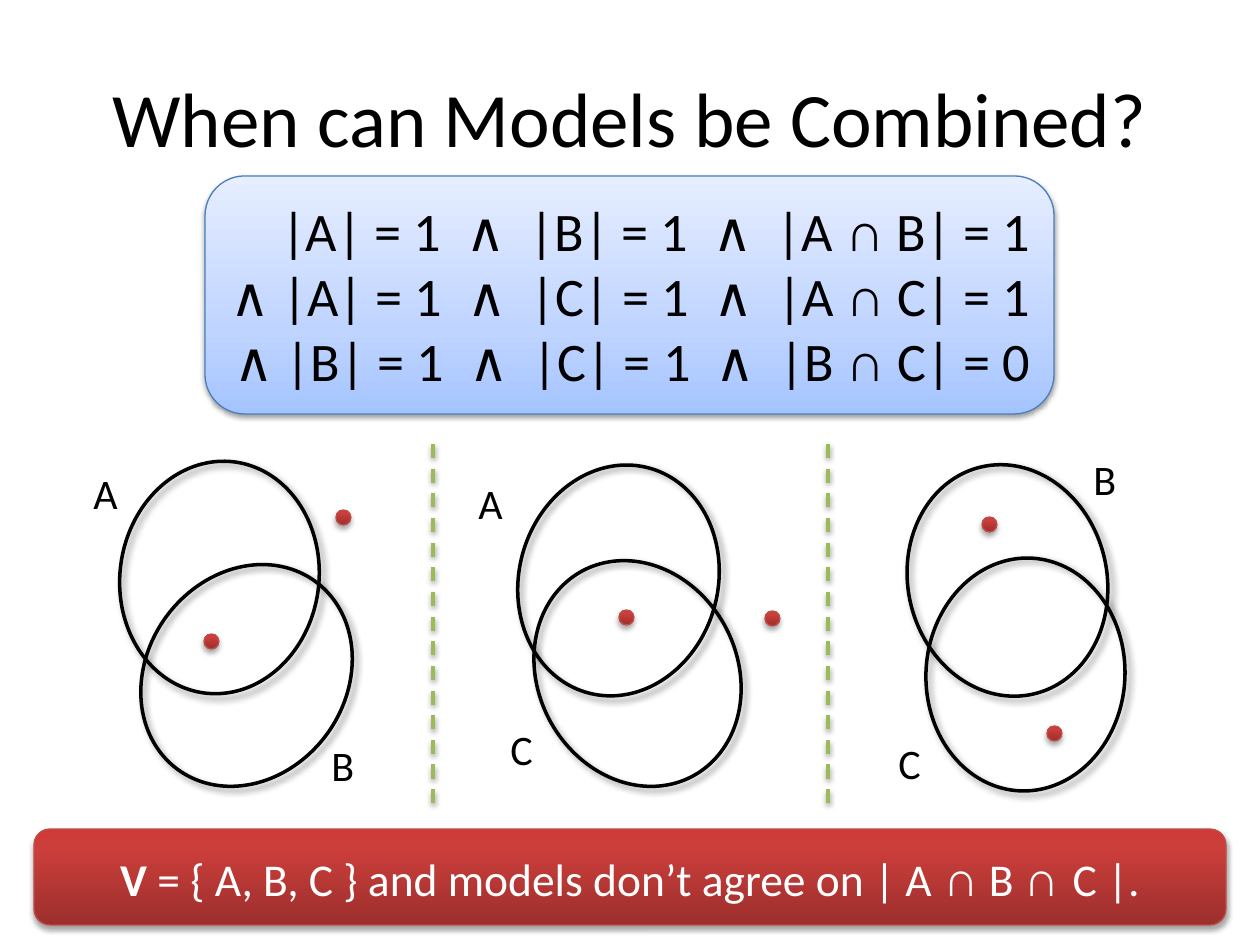
from lxml import etree
from pptx import Presentation
from pptx import util as u
from pptx.dml.color import RGBColor
from pptx.enum import dml, shapes, text
from pptx.oxml.ns import qn

BLACK = RGBColor(0x00, 0x00, 0x00)
WHITE = RGBColor(0xFF, 0xFF, 0xFF)
BLUE_EDGE = RGBColor(0x4B, 0x7E, 0xBC)
RED_EDGE = RGBColor(0xBF, 0x4C, 0x48)
GREEN = RGBColor(0x9B, 0xBB, 0x59)
BLUE_STOPS = [(0, RGBColor(0xA4, 0xC4, 0xFF)), (35, RGBColor(0xBF, 0xD4, 0xFF)),
              (100, RGBColor(0xE6, 0xEE, 0xFF))]
RED_STOPS = [(0, RGBColor(0x9C, 0x2F, 0x2D)), (80, RGBColor(0xCB, 0x3E, 0x3A)),
             (100, RGBColor(0xCE, 0x3B, 0x37))]

# opacity %, blur pt, distance pt, direction in degrees
SOFT_SHADOW = (38, 3.1, 1.6, 90)
RED_SHADOW = (35, 3.1, 1.8, 90)
SET_SHADOW = (40, 4, 3, 45)

EMU_PER_PX = 914400 / 126
SET_SIZE = (199, 233)
DOT = 15
LABEL_SIZE = (50, 63)


def px(*lengths):
    return [u.Emu(round(n * EMU_PER_PX)) for n in lengths]


def add_color(parent, color, opacity=100):
    node = etree.SubElement(parent, qn("a:srgbClr"), val=str(color))
    if opacity < 100:
        etree.SubElement(node, qn("a:alpha"), val=str(opacity * 1000))


def add_shadow(element, opacity, blur, distance, direction):
    effects = etree.SubElement(element.spPr, qn("a:effectLst"))
    outer = etree.SubElement(
        effects, qn("a:outerShdw"), blurRad=str(u.Pt(blur)), dist=str(u.Pt(distance)),
        dir=str(direction * 60000), algn="ctr", rotWithShape="0")
    add_color(outer, BLACK, opacity)


def fill_upward(shape, stops):
    """Fill with a gradient that runs from the bottom edge to the top."""
    shape.fill.background()
    placeholder = shape._element.spPr.find(qn("a:noFill"))
    gradient = etree.Element(qn("a:gradFill"), rotWithShape="1")
    stop_list = etree.SubElement(gradient, qn("a:gsLst"))
    for position, color in stops:
        add_color(etree.SubElement(stop_list, qn("a:gs"), pos=str(position * 1000)), color)
    etree.SubElement(gradient, qn("a:lin"), ang=str(270 * 60000), scaled="0")
    shape._element.spPr.replace(placeholder, gradient)


class Board:
    def __init__(self, slide, font="Calibri", symbol_font="Arial"):
        self.slide = slide
        self.font = font
        self.symbol_font = symbol_font

    def add_lines(self, frame, lines, size, color, align, symbol_size=None):
        """Add lines of runs; a run is text or (text, bold)."""
        for number, runs in enumerate(lines):
            paragraph = frame.paragraphs[0] if number == 0 else frame.add_paragraph()
            paragraph.alignment = align
            for item in runs:
                words, bold = item if isinstance(item, tuple) else (item, False)
                is_symbol = words.strip() == "∩"
                run = paragraph.add_run()
                run.text = words
                run.font.name = self.symbol_font if is_symbol else self.font
                run.font.size = u.Pt(symbol_size if is_symbol and symbol_size else size)
                run.font.bold = bold
                run.font.color.rgb = color

    def label(self, words, box, size, align=text.PP_ALIGN.LEFT, wrap=False):
        frame = self.slide.shapes.add_textbox(*px(*box)).text_frame
        frame.word_wrap = wrap
        frame.vertical_anchor = text.MSO_ANCHOR.MIDDLE
        self.add_lines(frame, [[words]], size, BLACK, align)

    def shape(self, kind, box, edge, width, shadow, stops=None):
        shape = self.slide.shapes.add_shape(kind, *px(*box))
        if stops:
            fill_upward(shape, stops)
        else:
            shape.fill.background()
        shape.line.color.rgb = edge
        shape.line.width = u.Pt(width)
        add_shadow(shape._element, *shadow)
        return shape

    def panel(self, box, edge, shadow, stops, lines, size, color, align, symbol_size=None):
        panel = self.shape(shapes.MSO_SHAPE.ROUNDED_RECTANGLE, box, edge, 0.75, shadow, stops)
        panel.text_frame.word_wrap = True
        panel.text_frame.vertical_anchor = text.MSO_ANCHOR.MIDDLE
        self.add_lines(panel.text_frame, lines, size, color, align, symbol_size)

    def set_outline(self, left, top, angle):
        outline = self.shape(shapes.MSO_SHAPE.OVAL, (left, top, *SET_SIZE), BLACK, 2, SET_SHADOW)
        outline.rotation = angle

    def dot(self, left, top):
        self.shape(shapes.MSO_SHAPE.OVAL, (left, top, DOT, DOT), RED_EDGE, 0.75,
                   RED_SHADOW, RED_STOPS)

    def divider(self, x, top, bottom):
        line = self.slide.shapes.add_connector(
            shapes.MSO_CONNECTOR.STRAIGHT, *px(x, top, x, bottom))
        line.line.color.rgb = GREEN
        line.line.width = u.Pt(2)
        line.line.dash_style = dml.MSO_LINE.DASH
        add_shadow(line._element, *SOFT_SHADOW)


def constraint(lead, first, second, shared):
    return [f"{lead}|{first}| = 1  ∧  |{second}| = 1  ∧  |{first} ", "∩",
            f" {second}| = {shared}"]


def main():
    deck = Presentation()
    deck.slide_width, deck.slide_height = px(1260, 945)
    board = Board(deck.slides.add_slide(deck.slide_layouts[6]))

    board.label("When can Models be Combined?", (63, 38, 1134, 158), 44,
                text.PP_ALIGN.CENTER, wrap=True)
    constraints = [constraint("", "A", "B", 1), constraint("∧ ", "A", "C", 1),
                   constraint("∧ ", "B", "C", 0)]
    board.panel((205, 176, 849, 238), BLUE_EDGE, SOFT_SHADOW, BLUE_STOPS,
                constraints, 31, BLACK, text.PP_ALIGN.RIGHT)

    # One model per column: lower and upper set, their names, the two elements
    models = [
        ([(147, 559, 36.2), (120, 461, 7.6)],
         [("A", 81, 461), ("B", 319, 733)], [(204, 634), (336, 510)]),
        ([(538, 557, 151.6), (519, 464, 15.2)],
         [("A", 466, 471), ("C", 498, 717)], [(619, 610), (765, 611)]),
        ([(926, 558, 3.1), (908, 464, 347.3)],
         [("B", 1081, 447), ("C", 886, 731)], [(982, 517), (1047, 726)]),
    ]
    for outlines, names, elements in models:
        for outline in outlines:
            board.set_outline(*outline)
        for name, left, top in names:
            board.label(name, (left, top, *LABEL_SIZE), 24)
        for element in elements:
            board.dot(*element)

    conclusion = [("V", True), " = { A, B, C } and models don’t agree on | A ", "∩",
                  " B ", "∩ ", "C |."]
    board.panel((34, 829, 1192, 96), RED_EDGE, RED_SHADOW, RED_STOPS,
                [conclusion], 26, WHITE, text.PP_ALIGN.CENTER, symbol_size=28)
    for x in (433, 828):
        board.divider(x, 444, 806)

    deck.save("out.pptx")


if __name__ == "__main__":
    main()
